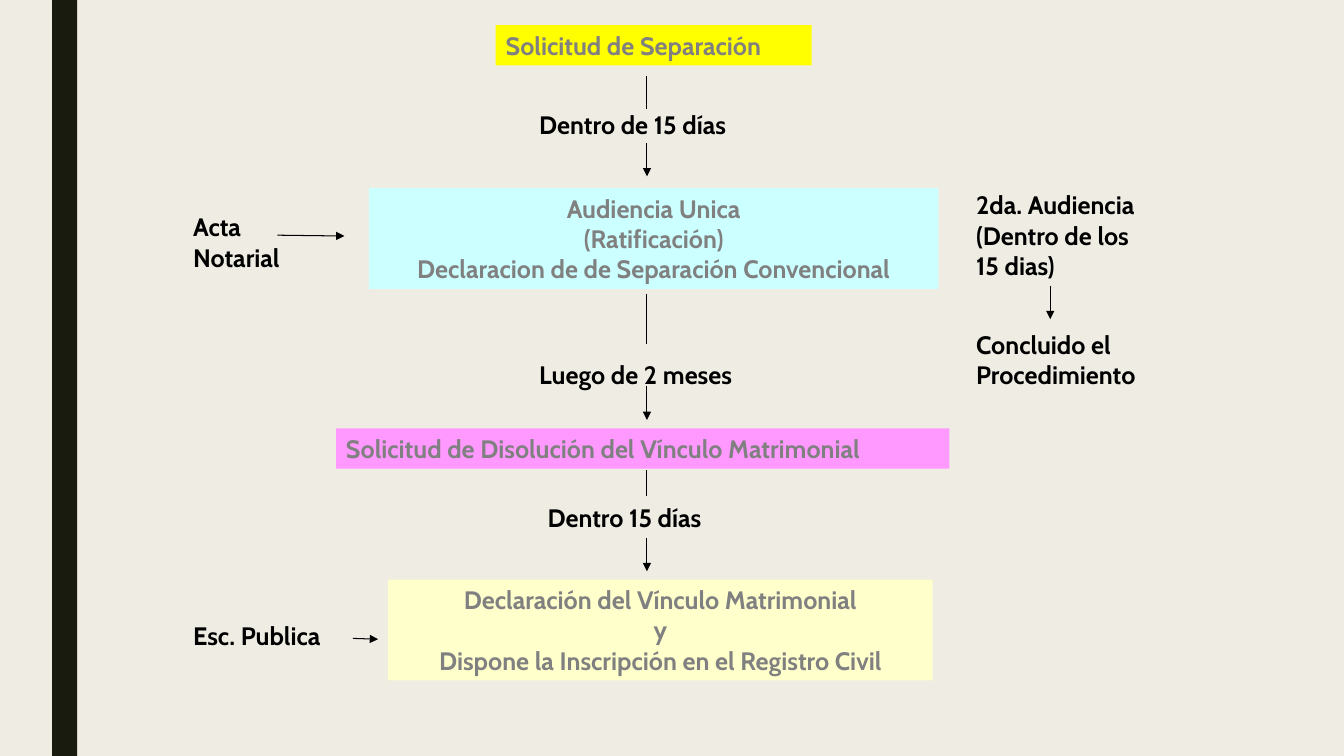
import pptx
import pptx.util
import pptx.dml.color
import pptx.enum.shapes
import pptx.enum.text
import pptx.oxml

COLS, ROWS = 160, 90
HEX = {
    "ground": "EFEDE3", "bar": "191B0E", "black": "000000", "gray": "808080",
    "yellow": "FFFF00", "cyan": "CCFFFF", "pink": "FF99FF", "cream": "FFFFCC",
}
INK = {name: pptx.dml.color.RGBColor.from_string(code) for name, code in HEX.items()}
RECT = pptx.enum.shapes.MSO_SHAPE.RECTANGLE
LINE = pptx.enum.shapes.MSO_CONNECTOR.STRAIGHT
ALIGN = pptx.enum.text.PP_ALIGN

deck = pptx.Presentation()
deck.slide_width = pptx.util.Inches(13.33)
deck.slide_height = pptx.util.Inches(7.5)
cell = deck.slide_height / ROWS
slide = deck.slides.add_slide(deck.slide_layouts[6])
slide.background.fill.solid()
slide.background.fill.fore_color.rgb = INK["ground"]


def grid(*units):
    """Turn grid units into slide lengths."""
    return [round(unit * cell) for unit in units]


def block(left, top, width, height, color):
    shape = slide.shapes.add_shape(RECT, *grid(left, top, width, height))
    shape.shadow.inherit = False
    shape.fill.solid()
    shape.fill.fore_color.rgb = INK[color]
    shape.line.fill.background()
    return shape


block(6.2, 0, 3, ROWS, "bar")

# left, top, width, fill, lines of text
steps = [
    (59, 3, 37.6, "yellow", ["Solicitud de Separación"]),
    (43.9, 22.4, 67.8, "cyan", ["Audiencia Unica", "(Ratificación)",
                                "Declaracion de de Separación Convencional"]),
    (40, 51, 73, "pink", ["Solicitud de Disolución del Vínculo Matrimonial"]),
    (46.2, 69, 64.8, "cream", ["Declaración del Vínculo Matrimonial", "y",
                               "Dispone la Inscripción en el Registro Civil"]),
]
notes = [
    (63, 12.4, 29, None, ["Dentro de 15 días"]),
    (63, 42.2, 29.5, None, ["Luego de 2 meses"]),
    (64, 59.2, 24.5, None, ["Dentro 15 días"]),
    (21.8, 24.6, 14.5, None, ["Acta", "Notarial"]),
    (21.8, 73.2, 20.2, None, ["Esc. Publica"]),
    (115, 22, 24.6, None, ["2da. Audiencia", "(Dentro de los", "15 dias)"]),
    (115, 38.6, 24.5, None, ["Concluido el", "Procedimiento"]),
]
for left, top, width, color, lines in steps + notes:
    height = 1.2 + 3.6 * len(lines)
    if color:
        shape = block(left, top, width, height, color)
    else:
        shape = slide.shapes.add_textbox(*grid(left, top, width, height))
    frame = shape.text_frame
    frame.word_wrap = True
    frame.vertical_anchor = pptx.enum.text.MSO_ANCHOR.TOP
    frame.text = "\n".join(lines)
    for para in frame.paragraphs:
        para.alignment = ALIGN.CENTER if color and len(lines) > 1 else ALIGN.LEFT
        font = para.runs[0].font
        font.name = "Cabin"
        font.size = pptx.util.Pt(18)
        font.bold = True
        font.color.rgb = INK["gray" if color else "black"]

# start column and row, end column and row, arrowhead
SPINE = 77
links = [
    (SPINE, 9, SPINE, 13, False),
    (SPINE, 17, SPINE, 21, True),
    (SPINE, 35, SPINE, 41, False),
    (SPINE, 46, SPINE, 50, True),
    (SPINE, 56, SPINE, 59, False),
    (SPINE, 64, SPINE, 68, True),
    (125, 34, 125, 38, True),
    (33, 28, 41, 28.1, True),
    (42, 76, 45, 76.1, True),
]
SPACE = 'xmlns:a="http://schemas.openxmlformats.org/drawingml/2006/main"'
for *ends, arrow in links:
    link = slide.shapes.add_connector(LINE, *grid(*ends))
    link.line.color.rgb = INK["black"]
    link.line.width = pptx.util.Pt(0.75)
    if arrow:
        head = pptx.oxml.parse_xml(f'<a:tailEnd {SPACE} type="triangle"/>')
        link.line._get_or_add_ln().append(head)
    link._element.spPr.append(pptx.oxml.parse_xml(f"<a:effectLst {SPACE}/>"))

deck.save("out.pptx")
